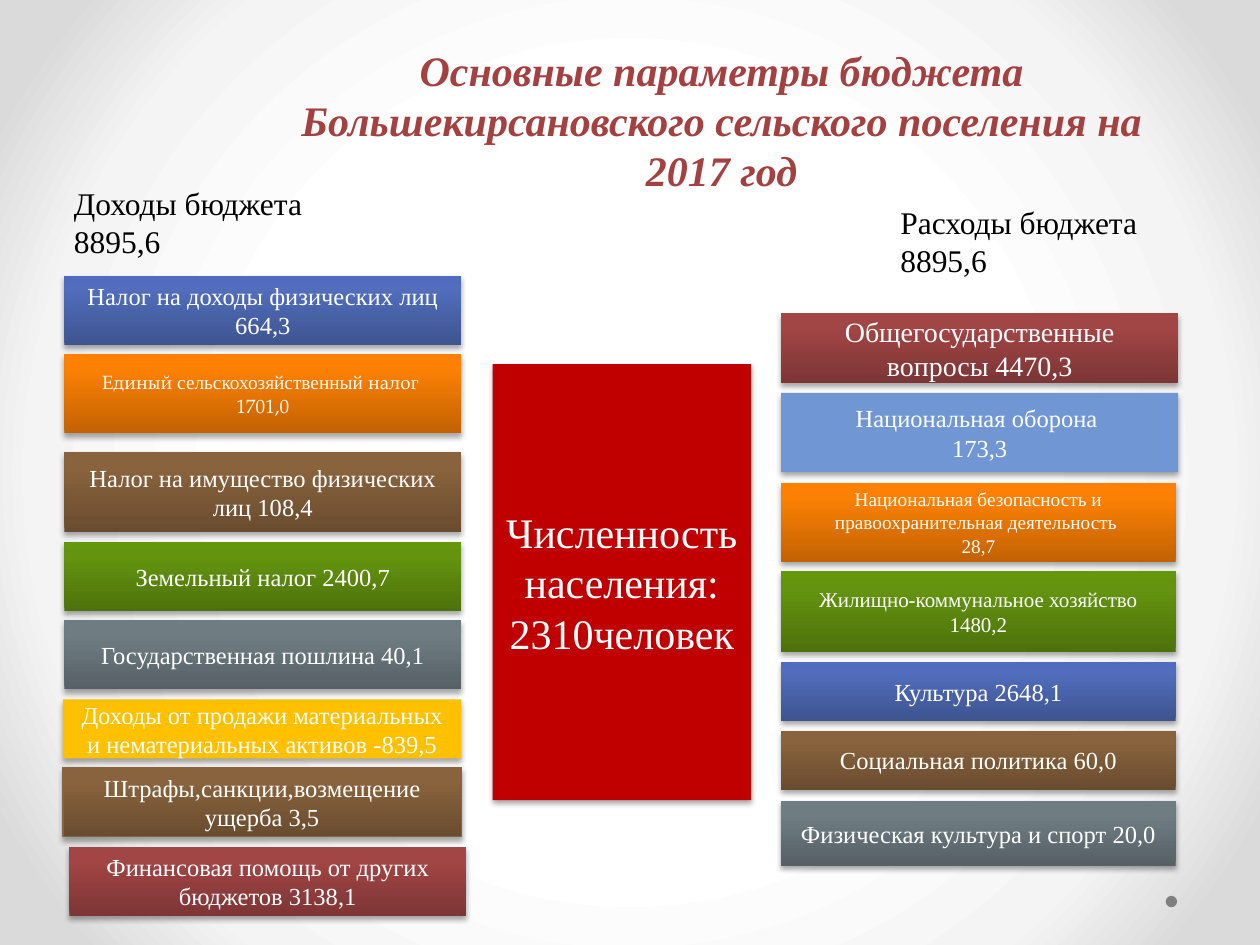
import pptx
import pptx.util
import pptx.dml.color
import pptx.enum.shapes
import pptx.enum.text
import pptx.oxml
import pptx.oxml.ns
from lxml import etree

Cm = pptx.util.Cm
Pt = pptx.util.Pt
RGBColor = pptx.dml.color.RGBColor
qn = pptx.oxml.ns.qn
MSO_SHAPE = pptx.enum.shapes.MSO_SHAPE
MSO_ANCHOR = pptx.enum.text.MSO_ANCHOR
PP_ALIGN = pptx.enum.text.PP_ALIGN

SERIF = "Times New Roman"
PAGELLA = "TeX Gyre Pagella"

BLACK = RGBColor(0x00, 0x00, 0x00)
WHITE = RGBColor(0xFF, 0xFF, 0xFF)
GRAY = RGBColor(0x80, 0x80, 0x80)
TITLE_RED = RGBColor(0xA5, 0x40, 0x40)
DEEP_RED = RGBColor(0xC0, 0x00, 0x00)
YELLOW = RGBColor(0xFF, 0xC0, 0x00)
SKY = RGBColor(0x70, 0x97, 0xD3)
BROWN_LINE = RGBColor(0x83, 0x64, 0x45)
BACKDROP = (WHITE, RGBColor(0xF4, 0xF4, 0xF4), RGBColor(0xDA, 0xDA, 0xDA))
BLUE = (RGBColor(0x3E, 0x54, 0x90), RGBColor(0x51, 0x6D, 0xBB), RGBColor(0x4F, 0x6C, 0xBE))
ORANGE = (RGBColor(0xC2, 0x62, 0x03), RGBColor(0xFB, 0x80, 0x04), RGBColor(0xFF, 0x80, 0x02))
BROWN = (RGBColor(0x69, 0x4C, 0x2F), RGBColor(0x89, 0x63, 0x3D), RGBColor(0x8B, 0x63, 0x3C))
GREEN = (RGBColor(0x4D, 0x72, 0x0B), RGBColor(0x64, 0x94, 0x0F), RGBColor(0x65, 0x97, 0x0C))
SLATE = (RGBColor(0x56, 0x60, 0x65), RGBColor(0x6F, 0x7D, 0x83), RGBColor(0x6F, 0x7E, 0x84))
RED = (RGBColor(0x7D, 0x35, 0x35), RGBColor(0xA2, 0x45, 0x45), RGBColor(0xA4, 0x43, 0x43))

TAX_LINE = (("Единый ", PAGELLA), ("сельскохозяйственный", SERIF), (" налог ", PAGELLA))

# left, top, width, height, fill, size, lines
INCOME = [
    (1.3, 5.56, 8, 1.4, BLUE, 14, ["Налог на доходы физических лиц 664,3"]),
    (1.3, 7.14, 8, 1.6, ORANGE, 11, [TAX_LINE, (("1701,0", PAGELLA),)]),
    (1.3, 9.12, 8, 1.6, BROWN, 14, ["Налог на имущество физических лиц 108,4"]),
    (1.3, 10.92, 8, 1.4, GREEN, 14, ["Земельный налог 2400,7"]),
    (1.3, 12.5, 8, 1.4, SLATE, 14, ["Государственная пошлина 40,1"]),
    (1.27, 14.1, 8.03, 1.19, YELLOW, 14,
     ["Доходы от продажи материальных и нематериальных активов -839,5"]),
    (1.27, 15.47, 8.03, 1.4, BROWN, 14, ["Штрафы,санкции,возмещение ущерба 3,5"]),
    (1.4, 17.07, 8, 1.4, RED, 14, ["Финансовая помощь от других бюджетов 3138,1"]),
]
EXPENSES = [
    (15.75, 6.32, 8, 1.4, RED, 16, ["Общегосударственные вопросы 4470,3"]),
    (15.75, 7.92, 8, 1.6, SKY, 14, ["Национальная оборона ", "173,3"]),
    (15.75, 9.73, 7.95, 1.6, ORANGE, 11,
     ["Национальная безопасность и правоохранительная деятельность ", "28,7"]),
    (15.75, 11.51, 7.95, 1.63, GREEN, 12, ["Жилищно-коммунальное хозяйство 1480,2"]),
    (15.75, 13.34, 7.95, 1.19, BLUE, 14, ["Культура 2648,1"]),
    (15.75, 14.73, 7.95, 1.19, BROWN, 14, ["Социальная политика 60,0"]),
    (15.75, 16.15, 7.95, 1.3, SLATE, 14, ["Физическая культура и спорт 20,0"]),
]
POPULATION = (9.93, 7.34, 5.21, 8.79, DEEP_RED, 24, ["Численность населения:", "2310человек"])


def set_gradient(props, colors, positions, radial=False):
    """Replace the solid fill in the properties element with a gradient."""
    grad = etree.Element(qn("a:gradFill"), rotWithShape="1")
    stops = etree.SubElement(grad, qn("a:gsLst"))
    for color, position in zip(colors, positions):
        stop = etree.SubElement(stops, qn("a:gs"), pos=str(position * 1000))
        etree.SubElement(stop, qn("a:srgbClr"), val=str(color))
    if radial:
        shade = etree.SubElement(grad, qn("a:path"), path="circle")
        etree.SubElement(shade, qn("a:fillToRect"), l="50000", t="50000", r="50000", b="50000")
    else:
        etree.SubElement(grad, qn("a:lin"), ang="16200000", scaled="0")
    props.replace(props.find(qn("a:solidFill")), grad)


def set_background(s):
    """Give the slide its soft radial background."""
    s.background.fill.solid()
    s.background.fill.fore_color.rgb = WHITE
    set_gradient(next(s.element.iter(qn("p:bgPr"))), BACKDROP, (50, 76, 92), radial=True)


def add_shadow(sp):
    """Drop a soft shadow below the shape."""
    sp.shadow.inherit = False
    effects = sp.element.spPr.find(qn("a:effectLst"))
    shadow = etree.SubElement(effects, qn("a:outerShdw"), blurRad="40000", dist="23000",
                              dir="5400000", rotWithShape="0")
    color = etree.SubElement(shadow, qn("a:srgbClr"), val=str(BLACK))
    etree.SubElement(color, qn("a:alpha"), val="35000")


def write_lines(tf, lines, size, color, align=PP_ALIGN.CENTER):
    """Write one paragraph per line, with runs where a line mixes fonts."""
    tf.word_wrap = True
    for i, line in enumerate(lines):
        p = tf.paragraphs[0] if i == 0 else tf.add_paragraph()
        p.alignment = align
        p.font.size = Pt(size)
        p.font.color.rgb = color
        if isinstance(line, str):
            p.font.name = SERIF
            p.add_run().text = line
        else:
            for text, font in line:
                r = p.add_run()
                r.text = text
                r.font.name = font


def add_box(s, left, top, width, height, fill, size, lines):
    """Add a shadowed rectangle with centred white text."""
    sp = s.shapes.add_shape(MSO_SHAPE.RECTANGLE, Cm(left), Cm(top), Cm(width), Cm(height))
    sp.fill.solid()
    if isinstance(fill, RGBColor):
        sp.fill.fore_color.rgb = fill
    else:
        set_gradient(sp.element.spPr, fill, (0, 80, 100))
    sp.line.fill.background()
    add_shadow(sp)
    sp.text_frame.vertical_anchor = MSO_ANCHOR.MIDDLE
    write_lines(sp.text_frame, lines, size, WHITE)
    return sp


def add_label(s, left, top, width, lines):
    """Add a column heading."""
    sp = s.shapes.add_textbox(Cm(left), Cm(top), Cm(width), Cm(1.8))
    write_lines(sp.text_frame, lines, 18, BLACK, PP_ALIGN.LEFT)


def add_title(s, text):
    """Place and format the title placeholder."""
    sp = s.shapes.title
    sp.left, sp.top, sp.width, sp.height = Cm(5.16), Cm(0.76), Cm(18.77), Cm(3.33)
    tf = sp.text_frame
    tf.auto_size = pptx.enum.text.MSO_AUTO_SIZE.NONE
    tf.vertical_anchor = MSO_ANCHOR.TOP
    write_lines(tf, [text], 24, TITLE_RED)
    tf.paragraphs[0].font.bold = True
    tf.paragraphs[0].font.italic = True


def add_dot(s):
    """Add the small dot in the lower right corner."""
    sp = s.shapes.add_shape(MSO_SHAPE.OVAL, Cm(23.5), Cm(18.06), Cm(0.23), Cm(0.23))
    sp.fill.solid()
    sp.fill.fore_color.rgb = GRAY
    sp.line.fill.background()
    sp.shadow.inherit = False


def main():
    """Build the budget slide."""
    prs = pptx.Presentation()
    prs.slide_width, prs.slide_height = Cm(25.4), Cm(19.05)
    s = prs.slides.add_slide(prs.slide_layouts[5])
    set_background(s)
    add_dot(s)
    add_title(s, "Основные параметры бюджета Большекирсановского сельского поселения на 2017 год")
    add_label(s, 1.24, 3.58, 5.2, ["Доходы бюджета", "8895,6"])
    add_label(s, 17.9, 3.97, 5.8, ["Расходы бюджета", "8895,6"])
    boxes = [add_box(s, *row) for row in INCOME + EXPENSES + [POPULATION]]
    fines = boxes[6]
    fines.line.color.rgb = BROWN_LINE
    fines.line.width = Pt(0.75)
    prs.save("out.pptx")


if __name__ == "__main__":
    main()
